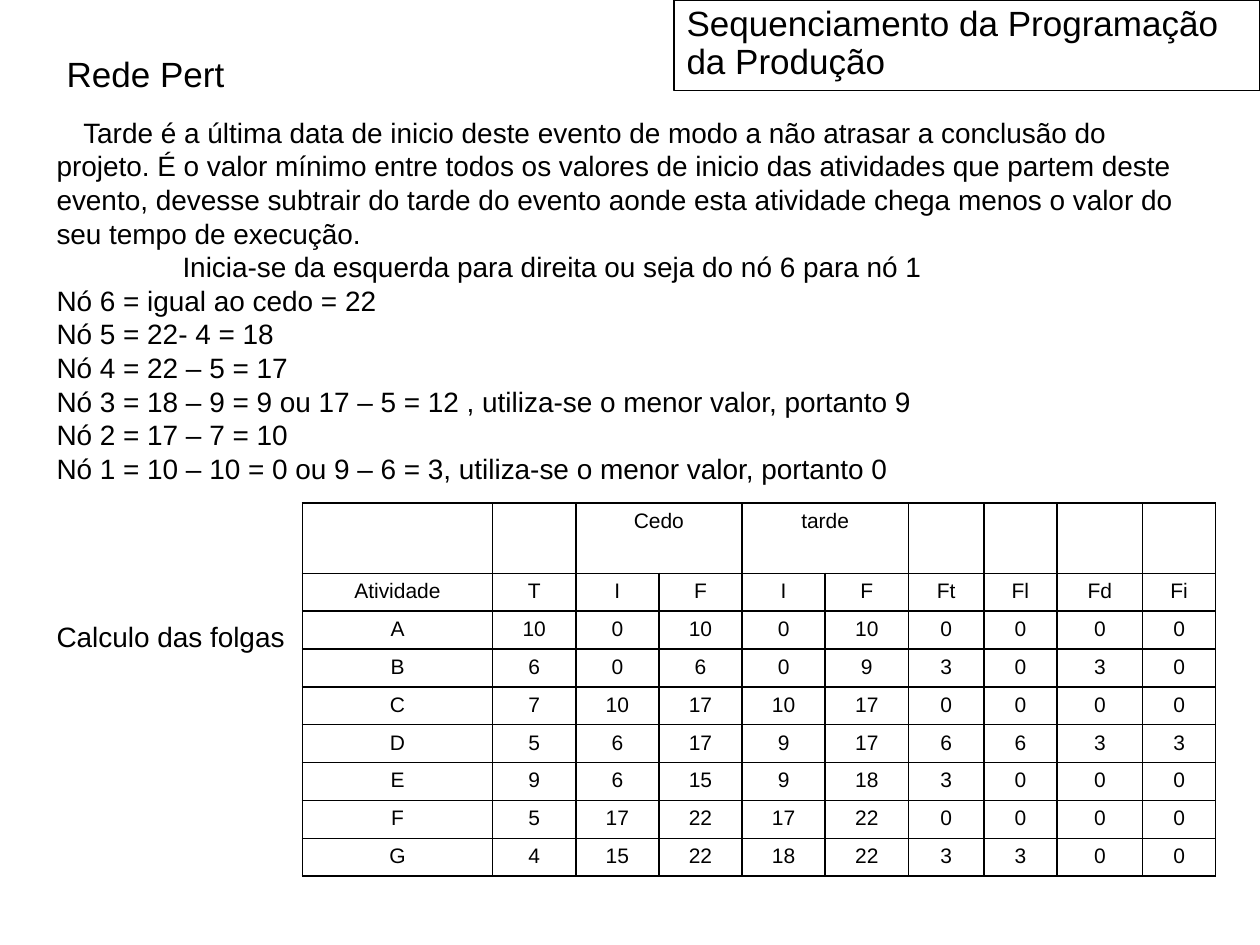
from dataclasses import dataclass

from lxml.etree import SubElement
from pptx import Presentation
from pptx.dml.color import RGBColor
from pptx.enum.shapes import MSO_SHAPE as Shape
from pptx.enum.text import MSO_ANCHOR as Anchor, PP_ALIGN as Align
from pptx.oxml.ns import qn
from pptx.util import Inches, Pt


@dataclass(frozen=True)
class Theme:
    font: str = "Arial"
    symbol_font: str = "Wingdings"
    clock: str = "·"  # one o'clock face in the symbol font
    ink: RGBColor = RGBColor(0, 0, 0)
    paper: RGBColor = RGBColor(255, 255, 255)
    heading: int = 20
    body: int = 16
    small: int = 12


DEFINITION = (
    "Tarde é a última data de inicio deste evento de modo a não atrasar a conclusão do "
    "projeto. É o valor mínimo entre todos os valores de inicio das atividades que partem "
    "deste evento, devesse subtrair do tarde do evento aonde esta atividade chega menos o "
    "valor do seu tempo de execução."
)
DIRECTION = "Inicia-se da esquerda para direita ou seja do nó 6 para nó 1"
NODES = [
    "Nó 6 = igual ao cedo = 22",
    "Nó 5 = 22- 4 = 18",
    "Nó 4 = 22 – 5 = 17",
    "Nó 3 = 18 – 9 = 9 ou 17 – 5 = 12 , utiliza-se o menor valor, portanto 9",
    "Nó 2 = 17 – 7 = 10",
    "Nó 1 = 10 – 10 = 0 ou 9 – 6 = 3, utiliza-se o menor valor, portanto 0",
]
SLACK_ROWS = [
    ["", "", "Cedo", "", "tarde", "", "", "", "", ""],
    ["Atividade", "T", "I", "F", "I", "F", "Ft", "Fl", "Fd", "Fi"],
    ["A", 10, 0, 10, 0, 10, 0, 0, 0, 0],
    ["B", 6, 0, 6, 0, 9, 3, 0, 3, 0],
    ["C", 7, 10, 17, 10, 17, 0, 0, 0, 0],
    ["D", 5, 6, 17, 9, 17, 6, 6, 3, 3],
    ["E", 9, 6, 15, 9, 18, 3, 0, 0, 0],
    ["F", 5, 17, 22, 17, 22, 0, 0, 0, 0],
    ["G", 4, 15, 22, 18, 22, 3, 3, 0, 0],
]
COLUMN_WIDTHS = [1.51] + [0.66] * 5 + [0.6, 0.58, 0.68, 0.58]
ROW_HEIGHTS = [0.56] + [0.3] * 8


def write(paragraph, text, *, theme, size, align=Align.LEFT, bullet=None,
          indent=0, before=0, spacing=None):
    """Fill a paragraph; a symbol-font bullet is followed by a small space."""
    paragraph.alignment = align
    if before:
        paragraph.space_before = Pt(before)
    if spacing:
        paragraph.line_spacing = spacing
    properties = paragraph._p.get_or_add_pPr()
    properties.set("marL", "0")
    properties.set("indent", str(Inches(indent)))
    runs = [(text, size)]
    if bullet:
        SubElement(properties, qn("a:buFont"), typeface=theme.symbol_font,
                   pitchFamily="2", charset="2")
        SubElement(properties, qn("a:buChar"), char=bullet)
        runs.insert(0, (" ", theme.small))
    paragraph.font.size = Pt(size)
    for content, points in runs:
        run = paragraph.add_run()
        run.text = content
        run.font.name = theme.font
        run.font.size = Pt(points)
        run.font.color.rgb = theme.ink


class SlideBuilder:
    def __init__(self, slide, theme):
        self.slide = slide
        self.theme = theme

    def text_box(self, left, top, width, height, paragraphs, wrap=True):
        box = self.slide.shapes.add_textbox(*map(Inches, (left, top, width, height)))
        frame = box.text_frame
        frame.word_wrap = wrap
        frame.vertical_anchor = Anchor.MIDDLE
        for index, (text, style) in enumerate(paragraphs):
            paragraph = frame.add_paragraph() if index else frame.paragraphs[0]
            write(paragraph, text, theme=self.theme, **style)

    def title_box(self, left, top, width, height, text):
        box = self.slide.shapes.add_shape(
            Shape.RECTANGLE, *map(Inches, (left, top, width, height)))
        box.shadow.inherit = False
        box.fill.solid()
        box.fill.fore_color.rgb = self.theme.paper
        box.line.color.rgb = self.theme.ink
        box.line.width = Pt(0.75)
        box.text_frame.word_wrap = True
        box.text_frame.vertical_anchor = Anchor.TOP
        write(box.text_frame.paragraphs[0], text, theme=self.theme,
              size=self.theme.heading, spacing=0.9)

    def table(self, left, top, widths, heights, rows, merges):
        frame = self.slide.shapes.add_table(
            len(rows), len(widths),
            *map(Inches, (left, top, sum(widths), sum(heights))))
        table = frame.table
        for column, width in zip(table.columns, widths):
            column.width = Inches(width)
        for row, height in zip(table.rows, heights):
            row.height = Inches(height)
        for row, values in zip(table.rows, rows):
            for cell, value in zip(row.cells, values):
                self.cell(cell, str(value))
        for row, first, last in merges:
            table.cell(row, first).merge(table.cell(row, last))

    def cell(self, cell, text):
        if text:
            write(cell.text_frame.paragraphs[0], text, theme=self.theme,
                  size=self.theme.small, align=Align.CENTER)
        else:
            cell.text_frame.paragraphs[0].font.size = Pt(self.theme.small)
        properties = cell._tc.get_or_add_tcPr()
        for side in ("L", "R", "T", "B"):
            border = SubElement(properties, qn(f"a:ln{side}"), w=str(Pt(1)))
            fill = SubElement(border, qn("a:solidFill"))
            SubElement(fill, qn("a:srgbClr"), val=str(self.theme.ink))
        cell.fill.background()


def main():
    presentation = Presentation()
    presentation.slide_width = Inches(10)
    presentation.slide_height = Inches(7.5)
    slide = presentation.slides.add_slide(presentation.slide_layouts[6])
    theme = Theme()
    builder = SlideBuilder(slide, theme)

    builder.text_box(0.43, 0.36, 1.45, 0.45,
                     [("Rede Pert", {"size": theme.heading})], wrap=False)
    body = {"size": theme.body}
    builder.text_box(0.35, 0.86, 9.21, 4.38, [
        (DEFINITION, {**body, "bullet": theme.clock}),
        (DIRECTION, {**body, "indent": 1}),
        *[(node, body) for node in NODES],
        ("Calculo das folgas", {**body, "before": 77}),
    ])
    builder.table(2.4, 3.99, COLUMN_WIDTHS, ROW_HEIGHTS, SLACK_ROWS,
                  merges=[(0, 2, 3), (0, 4, 5)])
    builder.title_box(5.35, 0, 4.65, 0.72, "Sequenciamento da Programação da Produção")
    presentation.save("out.pptx")


if __name__ == "__main__":
    main()
